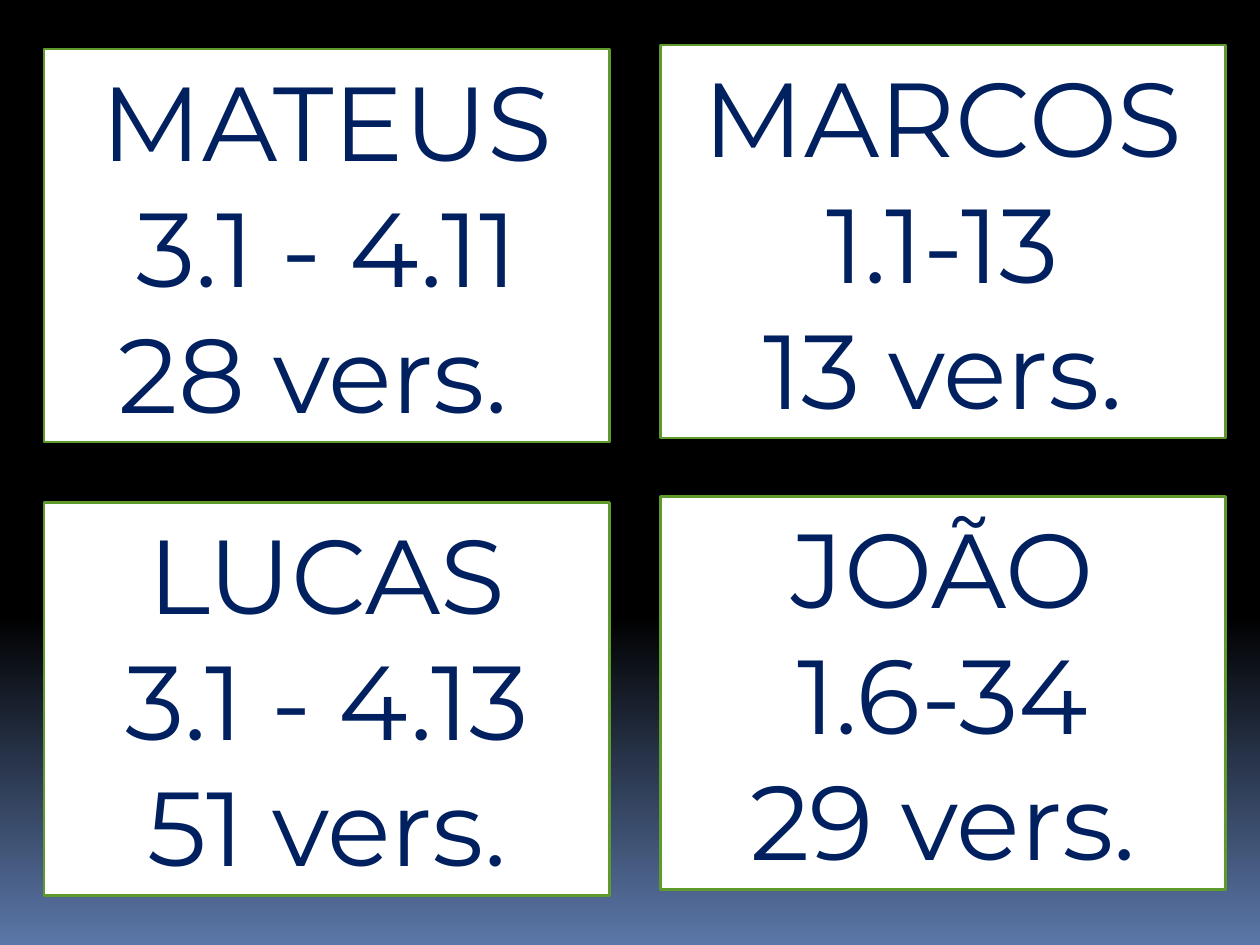
from pptx import Presentation
from pptx import util as u
from pptx.dml.color import RGBColor
from pptx.enum import shapes, text


def paint(color, code):
    color.rgb = RGBColor.from_string(code)


deck = Presentation()
deck.slide_width = u.Cm(25.4)
deck.slide_height = u.Cm(19.05)
slide = deck.slides.add_slide(deck.slide_layouts[6])

back = slide.background.fill
back.gradient()
back.gradient_angle = 270
for stop, (place, code) in zip(back.gradient_stops, [(0.65, "000000"), (1, "5B77A8")]):
    stop.position = place
    paint(stop.color, code)

left, right = 0.89, 13.31
cards = [
    (left, 0.99, ["MATEUS", "3.1 - 4.11", "28 vers. "]),
    (right, 10.01, ["JOÃO", "1.6-34", "29 vers."]),
    (right, 0.91, ["MARCOS", "1.1-13", "13 vers."]),
    (left, 10.13, ["LUCAS", "3.1 - 4.13", "51 vers."]),
]

for x, y, lines in cards:
    card = slide.shapes.add_shape(
        shapes.MSO_SHAPE.RECTANGLE, u.Cm(x), u.Cm(y), u.Cm(11.4), u.Cm(7.92)
    )
    card.shadow.inherit = False
    card.fill.solid()
    paint(card.fill.fore_color, "FFFFFF")
    paint(card.line.color, "5E9B2C")
    card.line.width = u.Pt(1.5)
    frame = card.text_frame
    frame.word_wrap = True
    frame.vertical_anchor = text.MSO_ANCHOR.MIDDLE
    frame.text = "\n".join(lines)
    for para in frame.paragraphs:
        para.alignment = text.PP_ALIGN.CENTER
        para.font.name = "Montserrat"
        para.font.size = u.Pt(60)
        paint(para.font.color, "002060")

deck.save("out.pptx")
